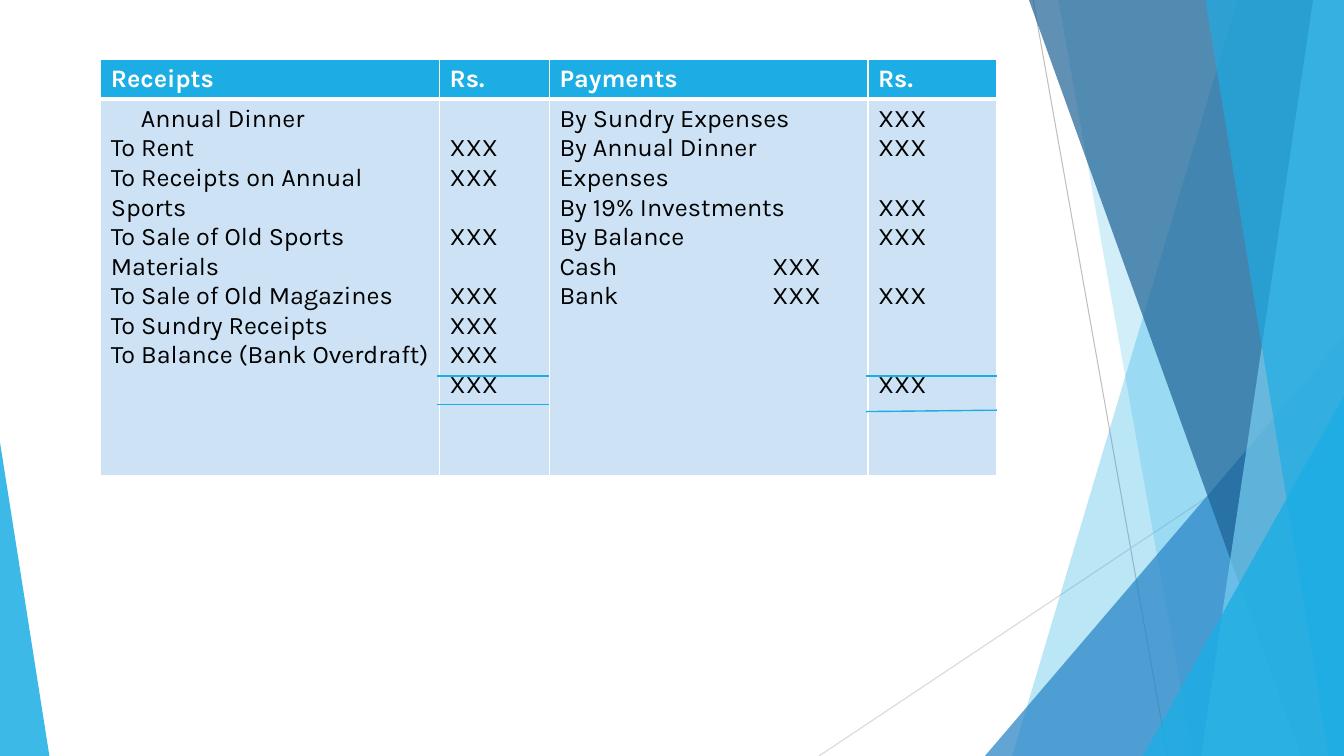
from lxml import etree
from pptx import Presentation
from pptx.dml.color import RGBColor
from pptx.enum.shapes import MSO_CONNECTOR, MSO_SHAPE
from pptx.oxml.ns import qn
from pptx.util import Pt

STRAIGHT = MSO_CONNECTOR.STRAIGHT
TRIANGLE = MSO_SHAPE.ISOSCELES_TRIANGLE

COLORS = {
    "white": "FFFFFF", "black": "000000", "sky": "1CADE4", "blue": "2683C6",
    "navy": "1D6294", "pale": "77CEEF", "cell": "CDE3F5",
    "grey": "BFBFBF", "light": "D9D9D9",
}
FONT = "Karla"
SIZE = 18
LINE_H = 21.05
MARGIN = 3.6
INDENT = 21.4
TAB = 152
W, H = 960, 540

COL_WIDTHS = [242, 78.5, 227.5, 92]
ROW_HEIGHTS = [28.3, 268.6]
HEADERS = ["Receipts", "Rs.", "Payments", "Rs."]
RECEIPTS = ["Annual Dinner", "To Rent", "To Receipts on Annual Sports",
            "To Sale of Old Sports Materials", "To Sale of Old Magazines",
            "To Sundry Receipts", "To Balance (Bank Overdraft)"]
PAYMENTS = ["By Sundry Expenses", "By Annual Dinner Expenses",
            "By 19% Investments", "By Balance", "Cash\tXXX", "Bank\tXXX"]
RECEIPT_ROWS = [1, 2, 4, 6, 7, 8, 9]
PAYMENT_ROWS = [0, 1, 3, 4, 6, 9]


def rgb(name):
    return RGBColor.from_string(COLORS[name])


def add_line(s, x1, y1, x2, y2, color, width):
    ln = s.shapes.add_connector(STRAIGHT, Pt(x1), Pt(y1), Pt(x2), Pt(y2))
    ln.line.color.rgb = rgb(color)
    ln.line.width = Pt(width)
    etree.SubElement(ln._element.spPr, qn("a:effectLst"))


def paint(sp, color, opacity):
    sp.shadow.inherit = False
    sp.line.fill.background()
    sp.fill.solid()
    sp.fill.fore_color.rgb = rgb(color)
    clr = sp._element.spPr.find(qn("a:solidFill"))[0]
    etree.SubElement(clr, qn("a:alpha"), val=str(opacity * 1000))


def add_ribbon(s, box, top_x, bottom_x, color, opacity):
    x, y, w, h = box
    fb = s.shapes.build_freeform(Pt(x + top_x), Pt(y))
    fb.add_line_segments([(Pt(x + w), Pt(y)), (Pt(x + w), Pt(y + h)),
                          (Pt(x + bottom_x), Pt(y + h))], close=True)
    paint(fb.convert_to_shape(), color, opacity)


def add_corner(s, box, w, h, apex, color, opacity):
    x, y, bw, bh = box
    left = x + apex * (bw - w)
    sp = s.shapes.add_shape(TRIANGLE, Pt(left), Pt(y + bh - h), Pt(w), Pt(h))
    sp.adjustments[0] = apex
    paint(sp, color, opacity)


def draw_facets(s, box):
    x, y, w, h = box
    add_line(s, x + 738, y, x + 834, y + h, "grey", 0.75)
    add_line(s, x + w, y + 290, x + 585, y + h, "light", 0.75)
    add_ribbon(s, box, 884, 723, "sky", 30)
    add_ribbon(s, box, 756, 852, "sky", 20)
    add_corner(s, box, 256.5, 300, 1, "blue", 72)
    add_ribbon(s, box, 735, 929.5, "navy", 70)
    add_ribbon(s, box, 938, 858, "pale", 70)
    add_ribbon(s, box, 861, 949, "sky", 65)
    add_corner(s, box, 143.5, 257, 1, "sky", 80)
    add_corner(s, box, 35.3, 224, 0, "sky", 85)


def set_borders(cell, bottom):
    tcPr = cell._tc.get_or_add_tcPr()
    for side, width in (("L", 1), ("R", 1), ("T", 1), ("B", bottom)):
        ln = etree.SubElement(tcPr, qn(f"a:ln{side}"), w=str(Pt(width)))
        fill = etree.SubElement(ln, qn("a:solidFill"))
        etree.SubElement(fill, qn("a:srgbClr"), val=COLORS["white"])


def fill_cell(cell, texts, fill, color, bold=False, rows=None, bottom=1):
    set_borders(cell, bottom)
    cell.fill.solid()
    cell.fill.fore_color.rgb = rgb(fill)
    rows = rows or list(range(len(texts)))
    cell.margin_top = Pt(MARGIN + rows[0] * LINE_H)
    tf = cell.text_frame
    for i, text in enumerate(texts):
        p = tf.paragraphs[0] if i == 0 else tf.add_paragraph()
        if i and rows[i] - rows[i - 1] > 1:
            p.space_before = Pt((rows[i] - rows[i - 1] - 1) * LINE_H)
        if "\t" in text:
            tabs = etree.SubElement(p._p.get_or_add_pPr(), qn("a:tabLst"))
            etree.SubElement(tabs, qn("a:tab"), pos=str(Pt(TAB)), algn="l")
        r = p.add_run()
        r.text = text
        r.font.name = FONT
        r.font.size = Pt(SIZE)
        r.font.bold = bold
        r.font.color.rgb = rgb(color)


def draw_account(s, box):
    x, y, w, h = box
    table = s.shapes.add_table(2, 4, Pt(x), Pt(y), Pt(w), Pt(h)).table
    for col, width in zip(table.columns, COL_WIDTHS):
        col.width = Pt(width)
    for row, height in zip(table.rows, ROW_HEIGHTS):
        row.height = Pt(height)
    for i, text in enumerate(HEADERS):
        fill_cell(table.cell(0, i), [text], "sky", "white", bold=True, bottom=3)
    columns = [(RECEIPTS, None), (["XXX"] * len(RECEIPT_ROWS), RECEIPT_ROWS),
               (PAYMENTS, None), (["XXX"] * len(PAYMENT_ROWS), PAYMENT_ROWS)]
    for i, (texts, rows) in enumerate(columns):
        cell = table.cell(1, i)
        fill_cell(cell, texts, "cell", "black", rows=rows)
        if i == 0:
            pPr = cell.text_frame.paragraphs[0]._p.get_or_add_pPr()
            pPr.set("marL", str(Pt(INDENT)))
    for i, lower_left, lower_right in ((1, 246.5, 246.5), (3, 251.5, 250.5)):
        left = x + sum(COL_WIDTHS[:i]) - 1.5
        right = x + sum(COL_WIDTHS[:i + 1])
        add_line(s, left, y + 226, right, y + 226, "sky", 1)
        add_line(s, left, y + lower_left, right, y + lower_right, "sky", 1)


def main():
    prs = Presentation()
    prs.slide_width, prs.slide_height = Pt(W), Pt(H)
    s = prs.slides.add_slide(prs.slide_layouts[6])
    s.background.fill.solid()
    s.background.fill.fore_color.rgb = rgb("white")
    draw_facets(s, (0, 0, W, H))
    draw_account(s, (72, 42.5, sum(COL_WIDTHS), sum(ROW_HEIGHTS)))
    prs.save("out.pptx")


if __name__ == "__main__":
    main()
